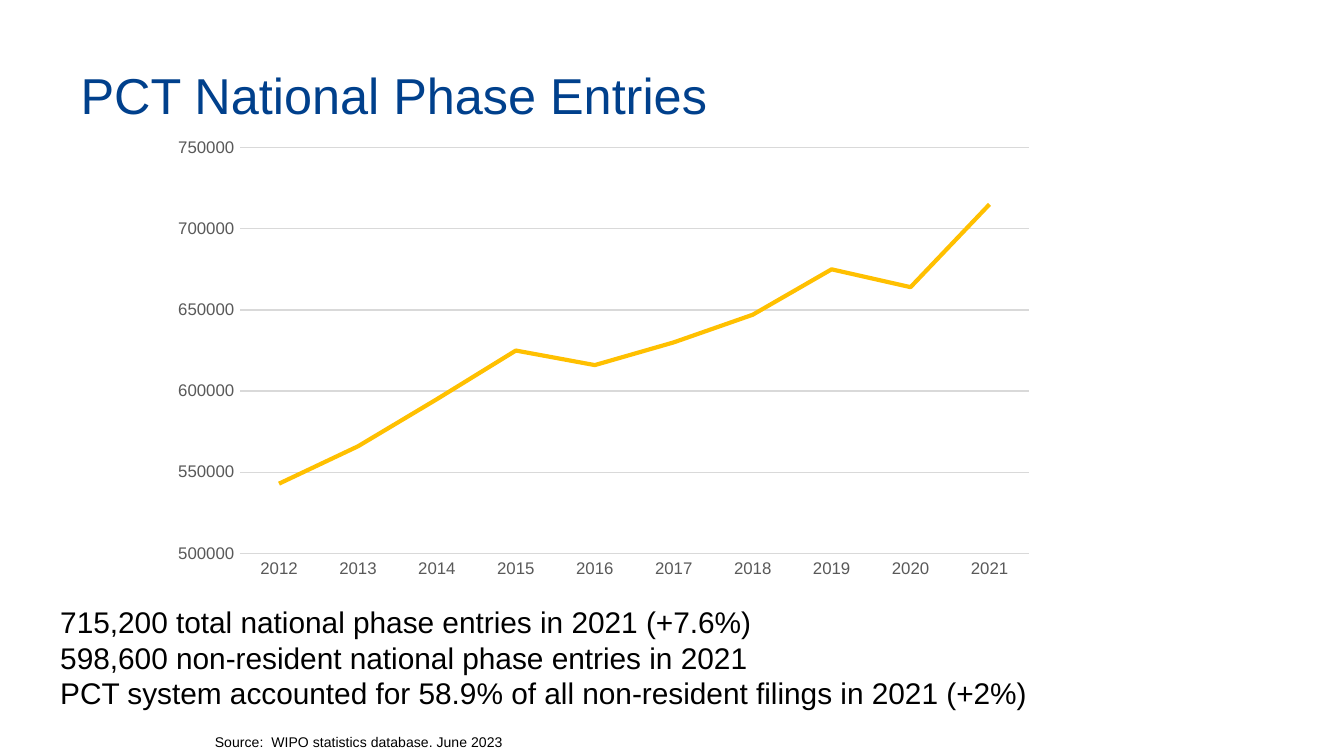
from dataclasses import dataclass

from lxml import etree
from pptx import Presentation
from pptx import util as u
from pptx.chart.data import CategoryChartData
from pptx.dml.color import RGBColor
from pptx.enum import chart as ch, text as tx
from pptx.oxml.ns import qn

WIDE = 10
HIGH = WIDE * 9 / 16
FACE = "Arial"


@dataclass
class Box:
    left: float
    top: float
    width: float
    height: float

    def place(self) -> list:
        return [u.Inches(v) for v in (self.left, self.top, self.width, self.height)]


@dataclass
class Note:
    box: Box
    lines: list
    size: float


NOTES = [
    Note(Box(1.5, 5.41, 3.75, 0.23),
         ["Source:  WIPO statistics database. June 2023"], 7.5),
    Note(Box(0.35, 4.44, 7.64, 0.91),
         ["715,200 total national phase entries in 2021 (+7.6%)",
          "598,600 non-resident national phase entries in 2021",
          "PCT system accounted for 58.9% of all non-resident filings in 2021 (+2%)"],
         16),
]
YEARS = [str(y) for y in range(2012, 2022)]
COUNTS = [543000, 566000, 595000, 625000, 616000,
          630000, 647000, 675000, 664000, 715000]
PLOT = {"x": 0.074, "y": 0.029, "w": 0.901, "h": 0.894}


def tint(code: str) -> RGBColor:
    return RGBColor.from_string(code)


def style(font, size: float, code: str) -> None:
    font.name = FACE
    font.size = u.Pt(size)
    font.color.rgb = tint(code)


def stroke(line, code: str, width: float) -> None:
    line.color.rgb = tint(code)
    line.width = u.Pt(width)


def add_title(slide, words: str) -> None:
    title = slide.shapes.title
    title.left, title.top, title.width, title.height = Box(0.5, 0.23, 9, 0.94).place()
    frame = title.text_frame
    frame.text = words
    frame.vertical_anchor = tx.MSO_ANCHOR.MIDDLE
    para = frame.paragraphs[0]
    para.alignment = tx.PP_ALIGN.LEFT
    style(para.font, 27, "00408C")


def add_note(slide, note: Note) -> None:
    frame = slide.shapes.add_textbox(*note.box.place()).text_frame
    frame.word_wrap = True
    frame.auto_size = tx.MSO_AUTO_SIZE.SHAPE_TO_FIT_TEXT
    para = frame.paragraphs[0]
    para.text = "\v".join(note.lines)
    style(para.font, note.size, "000000")


def fix_plot(chart) -> None:
    area = chart._chartSpace.chart.plotArea
    for old in area.findall(qn("c:layout")):
        area.remove(old)
    layout = etree.Element(qn("c:layout"))
    area.insert(0, layout)
    manual = etree.SubElement(layout, qn("c:manualLayout"))
    rules = {"layoutTarget": "inner", "xMode": "edge", "yMode": "edge", **PLOT}
    for name, value in rules.items():
        etree.SubElement(manual, qn(f"c:{name}")).set("val", str(value))


def add_graph(slide) -> None:
    data = CategoryChartData(number_format="General")
    data.categories = YEARS
    data.add_series("Series 1", COUNTS)
    chart = slide.shapes.add_chart(
        ch.XL_CHART_TYPE.LINE, *Box(1.3, 1, 6.52, 3.38).place(), data).chart
    chart.has_legend = False
    chart.has_title = False
    style(chart.font, 10, "000000")

    years, scale = chart.category_axis, chart.value_axis
    for axis in (years, scale):
        axis.major_tick_mark = axis.minor_tick_mark = ch.XL_TICK_MARK.NONE
        style(axis.tick_labels.font, 9, "595959")
    stroke(years.format.line, "D9D9D9", 0.75)
    scale.format.line.fill.background()
    scale.minimum_scale = 500000
    scale.has_major_gridlines = True
    stroke(scale.major_gridlines.format.line, "D9D9D9", 0.75)

    chart.plots[0].vary_by_categories = False
    trend = chart.plots[0].series[0]
    trend.smooth = False
    trend.marker.style = ch.XL_MARKER_STYLE.NONE
    stroke(trend.format.line, "FFC000", 2.25)
    fix_plot(chart)


def main() -> None:
    deck = Presentation()
    deck.slide_width, deck.slide_height = u.Inches(WIDE), u.Inches(HIGH)
    slide = deck.slides.add_slide(deck.slide_layouts[5])
    add_title(slide, "PCT National Phase Entries")
    for note in NOTES:
        add_note(slide, note)
    add_graph(slide)
    deck.save("out.pptx")


if __name__ == "__main__":
    main()
